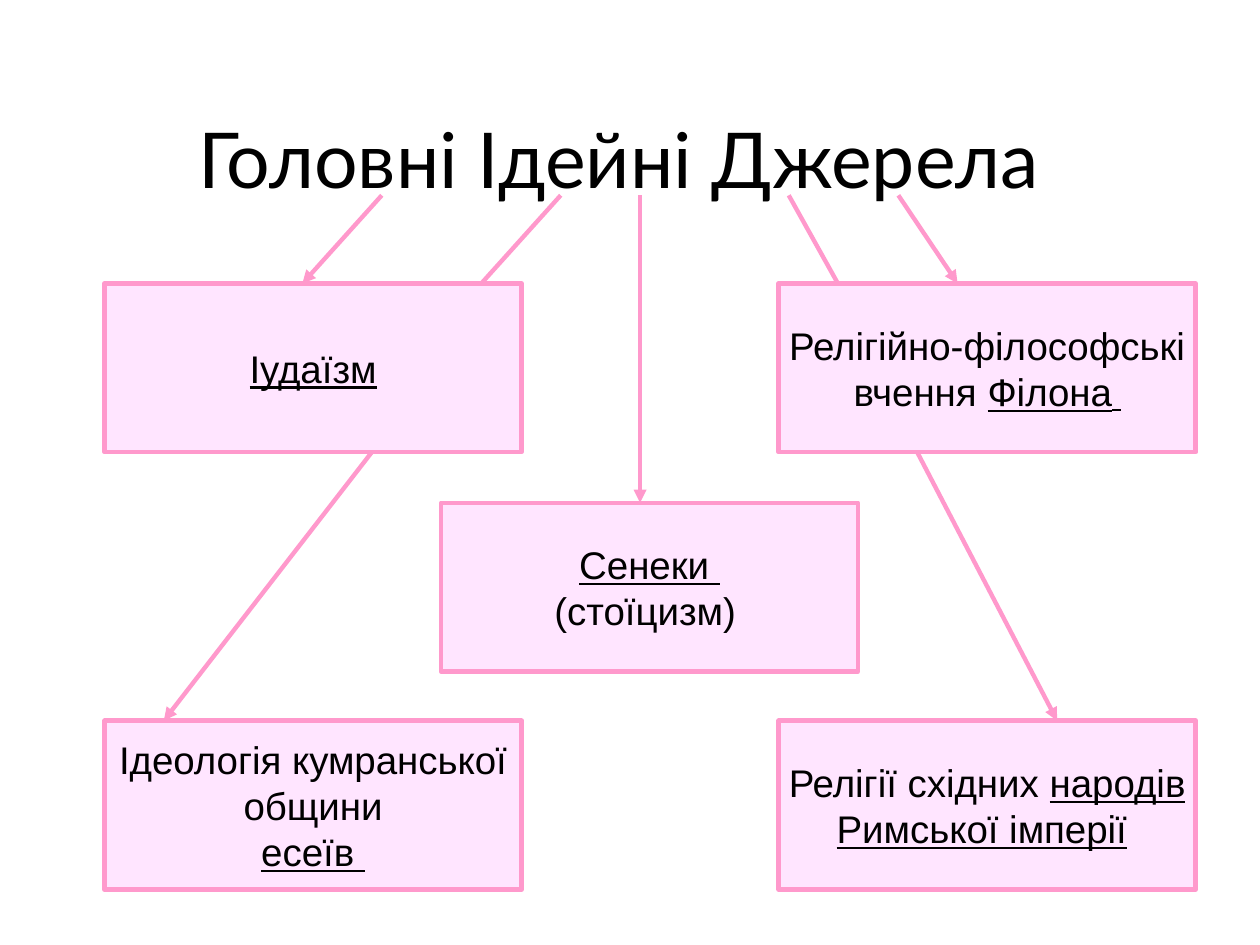
from lxml import etree
from pptx import Presentation
from pptx.dml.color import RGBColor
from pptx.enum.shapes import MSO_CONNECTOR as CONN, MSO_SHAPE as SHAPE
from pptx.enum.text import MSO_ANCHOR as ANCHOR, PP_ALIGN as ALIGN
from pptx.oxml.ns import qn
from pptx.util import Inches, Pt

PINK, PALE, BLACK = "FF99CC", "FFE5FF", "000000"
LINE_WIDTH = 2.5
BOX_W, BOX_H = 3.31, 1.34
LEFT, MIDDLE, RIGHT = 0.83, 3.5, 6.18
TOP, CENTER, BOTTOM = 2.25, 3.99, 5.72
ARROW_TOP = 1.55
UNDER = {"underline": True}
SMALL = {"size": 18}

# Each box: left, top, paragraphs made of (text, format) runs
BOXES = [
    (LEFT, TOP, [[("Іудаїзм", UNDER)]]),
    (RIGHT, TOP, [[("Релігійно-філософські", {})],
                  [("вчення ", {}), ("Філона", UNDER), (" ", UNDER | SMALL)]]),
    (MIDDLE, CENTER, [[("Сенеки ", UNDER)],
                      [("(стоїцизм)", {}), (" ", SMALL)]]),
    (LEFT, BOTTOM, [[("Ідеологія кумранської", {})],
                    [("общини", {})],
                    [("есеїв ", UNDER)]]),
    (RIGHT, BOTTOM, [[("Релігії східних ", {}), ("народів", UNDER)],
                     [("Римської імперії", UNDER), (" ", {})]]),
]

# Each line: x and y of start, x and y of end, arrowhead
LINES = [
    (3.03, ARROW_TOP, 2.4, TOP, True),
    (7.13, ARROW_TOP, 7.6, TOP, True),
    (5.08, ARROW_TOP, 5.08, CENTER, True),
    # Two long arrows that pass behind the upper boxes
    (4.45, ARROW_TOP, 3.82, TOP, False),
    (2.95, TOP + BOX_H, 1.3, BOTTOM, True),
    (6.26, ARROW_TOP, 6.65, TOP, False),
    (7.28, TOP + BOX_H, 8.39, BOTTOM, True),
]


def rgb(value):
    return RGBColor.from_string(value)


def add_run(p, text, size=22, font="Arial", color=BLACK, underline=False):
    r = p.add_run()
    r.text = text
    r.font.size = Pt(size)
    r.font.name = font
    r.font.color.rgb = rgb(color)
    r.font.underline = underline


def style_line(line):
    line.color.rgb = rgb(PINK)
    line.width = Pt(LINE_WIDTH)


def add_title(slide, left, top, width, height):
    sp = slide.shapes.add_textbox(*map(Inches, (left, top, width, height)))
    tf = sp.text_frame
    tf.word_wrap = True
    tf.vertical_anchor = ANCHOR.MIDDLE
    p = tf.paragraphs[0]
    p.alignment = ALIGN.CENTER
    add_run(p, "Головні Ідейні Джерела", size=44, font="Lato")


def add_box(slide, left, top, paragraphs):
    sp = slide.shapes.add_shape(
        SHAPE.RECTANGLE, *map(Inches, (left, top, BOX_W, BOX_H)))
    sp.shadow.inherit = False
    sp.fill.solid()
    sp.fill.fore_color.rgb = rgb(PALE)
    style_line(sp.line)
    tf = sp.text_frame
    tf.word_wrap = False
    tf.vertical_anchor = ANCHOR.MIDDLE
    for i, runs in enumerate(paragraphs):
        p = tf.add_paragraph() if i else tf.paragraphs[0]
        p.alignment = ALIGN.CENTER
        for text, style in runs:
            add_run(p, text, **style)


def add_line(slide, x1, y1, x2, y2, arrow):
    cn = slide.shapes.add_connector(
        CONN.STRAIGHT, *map(Inches, (x1, y1, x2, y2)))
    style_line(cn.line)
    sp_pr = cn._element.spPr
    if arrow:
        etree.SubElement(sp_pr.find(qn("a:ln")), qn("a:tailEnd"), type="triangle")
    etree.SubElement(sp_pr, qn("a:effectLst"))


def main():
    prs = Presentation()
    prs.slide_width, prs.slide_height = Inches(10), Inches(7.5)
    slide = prs.slides.add_slide(prs.slide_layouts[6])
    add_title(slide, 0.5, 0.75, 8.83, 1)
    for box in BOXES:
        add_box(slide, *box)
    for line in LINES:
        add_line(slide, *line)
    prs.save("out.pptx")


if __name__ == "__main__":
    main()
